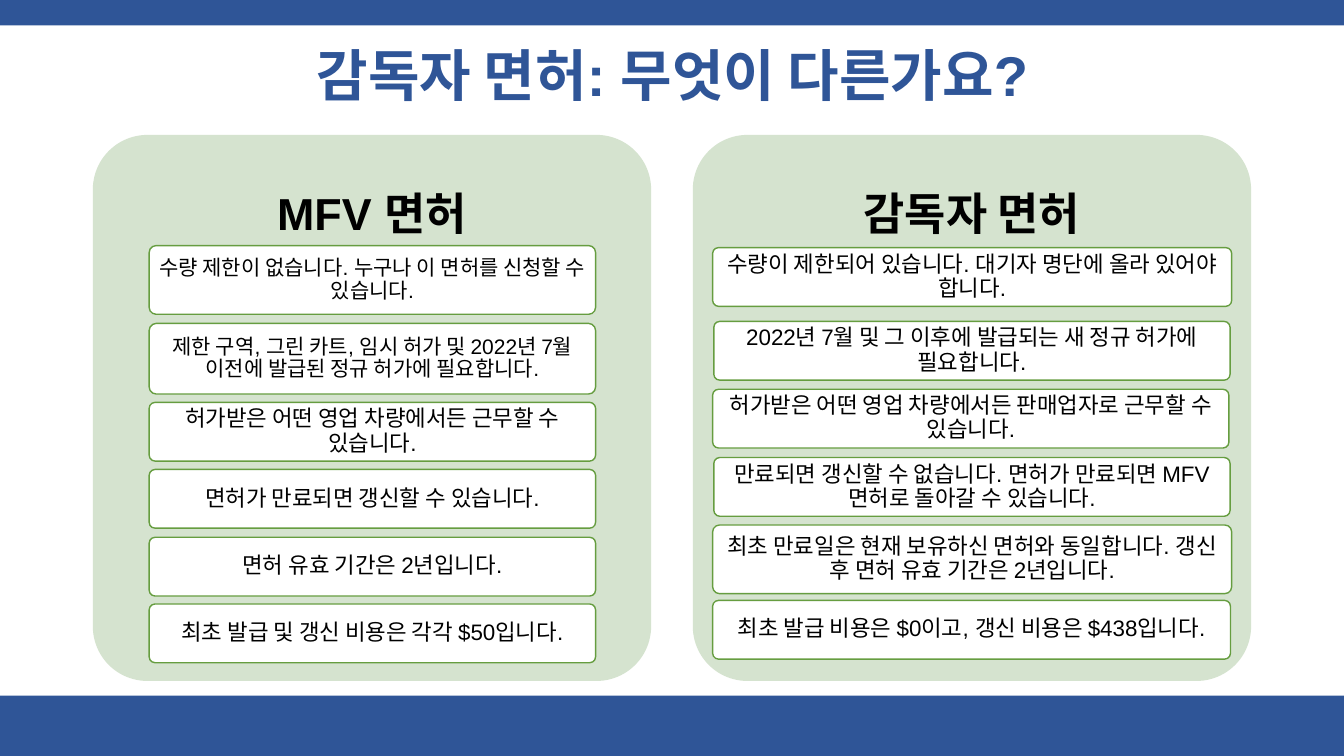
from dataclasses import dataclass

from pptx import Presentation
from pptx.dml.color import RGBColor
from pptx.enum.shapes import MSO_SHAPE
from pptx.enum.text import MSO_ANCHOR, PP_ALIGN
from pptx.shapes.autoshape import Shape
from pptx.slide import Slide
from pptx.util import Cm, Pt

COLORS = {"blue": "2F5597", "panel": "D5E3CF", "border": "669D40",
          "white": "FFFFFF", "black": "000000"}
SLIDE_W, SLIDE_H = 33.87, 19.05
PANEL_TOP, PANEL_W, PANEL_H = 3.4, 14.07, 13.76
CORNER = 0.1


@dataclass
class Row:
    text: str
    left: float
    top: float
    width: float
    height: float = 1.48
    size: int = 16


@dataclass
class Panel:
    heading: str
    left: float
    rows: list[Row]


PANELS = [
    Panel("MFV 면허", 2.34, [
        Row("수량 제한이 없습니다. 누구나 이 면허를 신청할 수 있습니다.", 3.76, 6.19, 11.25, 1.73, 15),
        Row("제한 구역, 그린 카트, 임시 허가 및 2022년 7월 이전에 발급된 정규 허가에 필요합니다.",
            3.76, 8.15, 11.25, 1.78, 15),
        Row("허가받은 어떤 영업 차량에서든 근무할 수 있습니다.", 3.76, 10.14, 11.25),
        Row("면허가 만료되면 갱신할 수 있습니다.", 3.76, 11.83, 11.25),
        Row("면허 유효 기간은 2년입니다.", 3.76, 13.54, 11.25),
        Row("최초 발급 및 갱신 비용은 각각 $50입니다.", 3.76, 15.22, 11.25),
    ]),
    Panel("감독자 면허", 17.46, [
        Row("수량이 제한되어 있습니다. 대기자 명단에 올라 있어야 합니다.", 17.96, 6.24, 13.08),
        Row("2022년 7월 및 그 이후에 발급되는 새 정규 허가에 필요합니다.", 17.99, 8.1, 13.01),
        Row("허가받은 어떤 영업 차량에서든 판매업자로 근무할 수 있습니다.", 17.96, 9.81, 13.01),
        Row("만료되면 갱신할 수 없습니다. 면허가 만료되면 MFV 면허로 돌아갈 수 있습니다.",
            17.99, 11.53, 13.01),
        Row("최초 만료일은 현재 보유하신 면허와 동일합니다. 갱신 후 면허 유효 기간은 2년입니다.",
            17.96, 13.23, 13.08, 1.73),
        Row("최초 발급 비용은 $0이고, 갱신 비용은 $438입니다.", 17.96, 15.13, 13.05),
    ]),
]


def rgb(name: str) -> RGBColor:
    return RGBColor.from_string(COLORS[name])


def add_box(s: Slide, kind: MSO_SHAPE, left: float, top: float, width: float,
            height: float, fill: str, line: str | None = None) -> Shape:
    sp = s.shapes.add_shape(kind, Cm(left), Cm(top), Cm(width), Cm(height))
    sp.shadow.inherit = False
    sp.fill.solid()
    sp.fill.fore_color.rgb = rgb(fill)
    if line:
        sp.line.color.rgb = rgb(line)
        sp.line.width = Pt(1)
    else:
        sp.line.fill.background()
    if kind == MSO_SHAPE.ROUNDED_RECTANGLE:
        sp.adjustments[0] = CORNER
    return sp


def write(sp: Shape, text: str, size: int, color: str, bold: bool,
          insets: tuple[float, float, float, float]) -> None:
    """Centre the text in the shape; insets run left, top, right, bottom in cm."""
    tf = sp.text_frame
    frame_format = {"word_wrap": True, "vertical_anchor": MSO_ANCHOR.MIDDLE}
    for side, inset in zip(("left", "top", "right", "bottom"), insets):
        frame_format[f"margin_{side}"] = Cm(inset)
    for name, value in frame_format.items():
        setattr(tf, name, value)
    p = tf.paragraphs[0]
    p.alignment = PP_ALIGN.CENTER
    p.line_spacing = 0.9
    r = p.add_run()
    r.text = text
    for name, value in {"name": "Arial", "size": Pt(size), "bold": bold}.items():
        setattr(r.font, name, value)
    r.font.color.rgb = rgb(color)


def add_panel(s: Slide, panel: Panel) -> None:
    rounded = MSO_SHAPE.ROUNDED_RECTANGLE
    sp = add_box(s, rounded, panel.left, PANEL_TOP, PANEL_W, PANEL_H, "panel")
    write(sp, panel.heading, 32, "black", True, (0.33, 0.33, 0.33, 9.98))
    for row in panel.rows:
        sp = add_box(s, rounded, row.left, row.top, row.width, row.height,
                     "white", "border")
        write(sp, row.text, row.size, "black", False, (0.11, 0.08, 0.11, 0.08))


def main() -> None:
    prs = Presentation()
    prs.slide_width, prs.slide_height = Cm(SLIDE_W), Cm(SLIDE_H)
    s = prs.slides.add_slide(prs.slide_layouts[6])
    for top, height in ((0, 0.64), (17.53, 1.52)):
        add_box(s, MSO_SHAPE.RECTANGLE, 0, top, SLIDE_W, height, "blue")
    title = s.shapes.add_textbox(Cm(2.34), Cm(1.02), Cm(29.21), Cm(1.9))
    write(title, "감독자 면허: 무엇이 다른가요?", 40, "blue", True,
          (0.25, 0.13, 0.25, 0.13))
    for panel in PANELS:
        add_panel(s, panel)
    prs.save("out.pptx")


if __name__ == "__main__":
    main()
